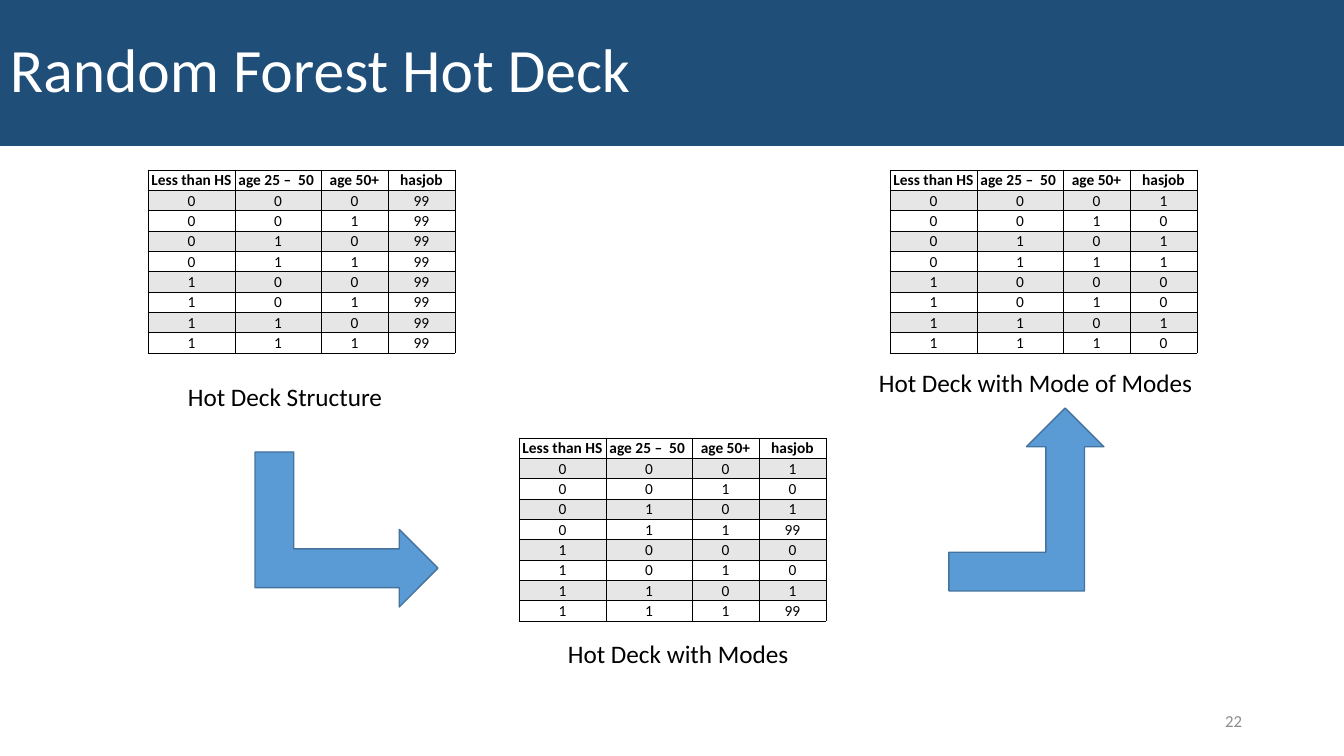
from itertools import product

from lxml import etree
from pptx import Presentation
from pptx import util as u
from pptx.dml.color import RGBColor
from pptx.enum import shapes, text
from pptx.oxml import ns

FONT = "Calibri"
HEADERS = ("Less than HS", "age 25 –  50 ", "age 50+", "hasjob")
COLUMN_WIDTHS = (87, 86, 67, 67)
TABLE_HEIGHT = 183
ARROW_SIZE = (155, 183)


def px(n):
    """Turn slide pixels into EMU."""
    return u.Inches(n / 100.8)


def color(value):
    """Turn a hex string into a colour."""
    return RGBColor.from_string(value)


def style(p, size, fill="000000", bold=False, align=text.PP_ALIGN.LEFT):
    """Set the font and alignment of a paragraph."""
    p.alignment = align
    p.font.name = FONT
    p.font.size = u.Pt(size)
    p.font.bold = bold
    p.font.color.rgb = color(fill)


def add_shape(s, kind, box, fill, line=None):
    """Add a filled preset shape."""
    sp = s.shapes.add_shape(kind, *map(px, box))
    sp.shadow.inherit = False
    sp.fill.solid()
    sp.fill.fore_color.rgb = color(fill)
    if line:
        sp.line.color.rgb = color(line)
        sp.line.width = u.Pt(1)
    else:
        sp.line.fill.background()
    return sp


def add_title(s, words):
    """Add the title band across the top."""
    sp = add_shape(s, shapes.MSO_SHAPE.RECTANGLE, (0, 0, 1344, 146), "1F4E79")
    tf = sp.text_frame
    tf.word_wrap = True
    tf.vertical_anchor = text.MSO_ANCHOR.MIDDLE
    p = tf.paragraphs[0]
    p.text = words
    p.line_spacing = 0.9
    style(p, 44, "FFFFFF")


def add_label(s, words, box, size=18, fill="000000",
              align=text.PP_ALIGN.LEFT, anchor=text.MSO_ANCHOR.TOP):
    """Add a one-line text box."""
    tf = s.shapes.add_textbox(*map(px, box)).text_frame
    tf.word_wrap = True
    tf.vertical_anchor = anchor
    p = tf.paragraphs[0]
    p.text = words
    style(p, size, fill, align=align)


def add_borders(cell):
    """Draw thin black lines on the four sides of a cell."""
    tc_pr = cell._tc.get_or_add_tcPr()
    for side in ("lnL", "lnR", "lnT", "lnB"):
        ln = etree.SubElement(tc_pr, ns.qn(f"a:{side}"), w=str(u.Pt(0.5)))
        solid = etree.SubElement(ln, ns.qn("a:solidFill"))
        etree.SubElement(solid, ns.qn("a:srgbClr"), val="000000")


def fill_cell(cell, words, row):
    """Write and format one table cell."""
    cell.margin_left = cell.margin_right = cell.margin_top = px(1)
    cell.margin_bottom = 0
    cell.vertical_anchor = text.MSO_ANCHOR.MIDDLE
    add_borders(cell)
    if row % 2:
        cell.fill.solid()
        cell.fill.fore_color.rgb = color("E7E6E6")
    else:
        cell.fill.background()
    p = cell.text_frame.paragraphs[0]
    p.text = words
    style(p, 11, bold=row == 0, align=text.PP_ALIGN.CENTER)


def add_deck(s, left, top, jobs):
    """Add a hot deck table with every 0/1 combination and its job value."""
    rows = [HEADERS]
    rows += [(*flags, job) for flags, job in zip(product("01", repeat=3), jobs)]
    box = (left, top, sum(COLUMN_WIDTHS), TABLE_HEIGHT)
    table = s.shapes.add_table(len(rows), len(HEADERS), *map(px, box)).table
    table.first_row = table.horz_banding = False
    for column, width in zip(table.columns, COLUMN_WIDTHS):
        column.width = px(width)
    for i, row in enumerate(rows):
        for j, words in enumerate(row):
            fill_cell(table.cell(i, j), words, i)


def add_arrow(s, left, top, rotation=0):
    """Add a bent arrow leading to the next deck."""
    sp = add_shape(s, shapes.MSO_SHAPE.BENT_UP_ARROW, (left, top, *ARROW_SIZE),
                   "5B9BD5", "43739E")
    sp.rotation = rotation


def main():
    """Build the slide and save it."""
    prs = Presentation()
    prs.slide_width, prs.slide_height = px(1344), px(756)
    s = prs.slides.add_slide(prs.slide_layouts[6])
    add_title(s, "Random Forest Hot Deck")
    add_label(s, "22", (950, 701, 302, 40), 12, "8C8C8C",
              text.PP_ALIGN.RIGHT, text.MSO_ANCHOR.MIDDLE)
    add_deck(s, 148, 170, ["99"] * 8)
    add_deck(s, 519, 438, ["1", "0", "1", "99", "0", "0", "1", "99"])
    add_deck(s, 890, 170, ["1", "0", "1", "1", "0", "0", "1", "0"])
    add_label(s, "Hot Deck Structure", (178, 376, 246, 40))
    add_label(s, "Hot Deck with Modes", (558, 633, 246, 40))
    add_label(s, "Hot Deck with Mode of Modes", (869, 362, 348, 40))
    add_arrow(s, 269, 438, 90)
    add_arrow(s, 949, 408)
    prs.save("out.pptx")


if __name__ == "__main__":
    main()
